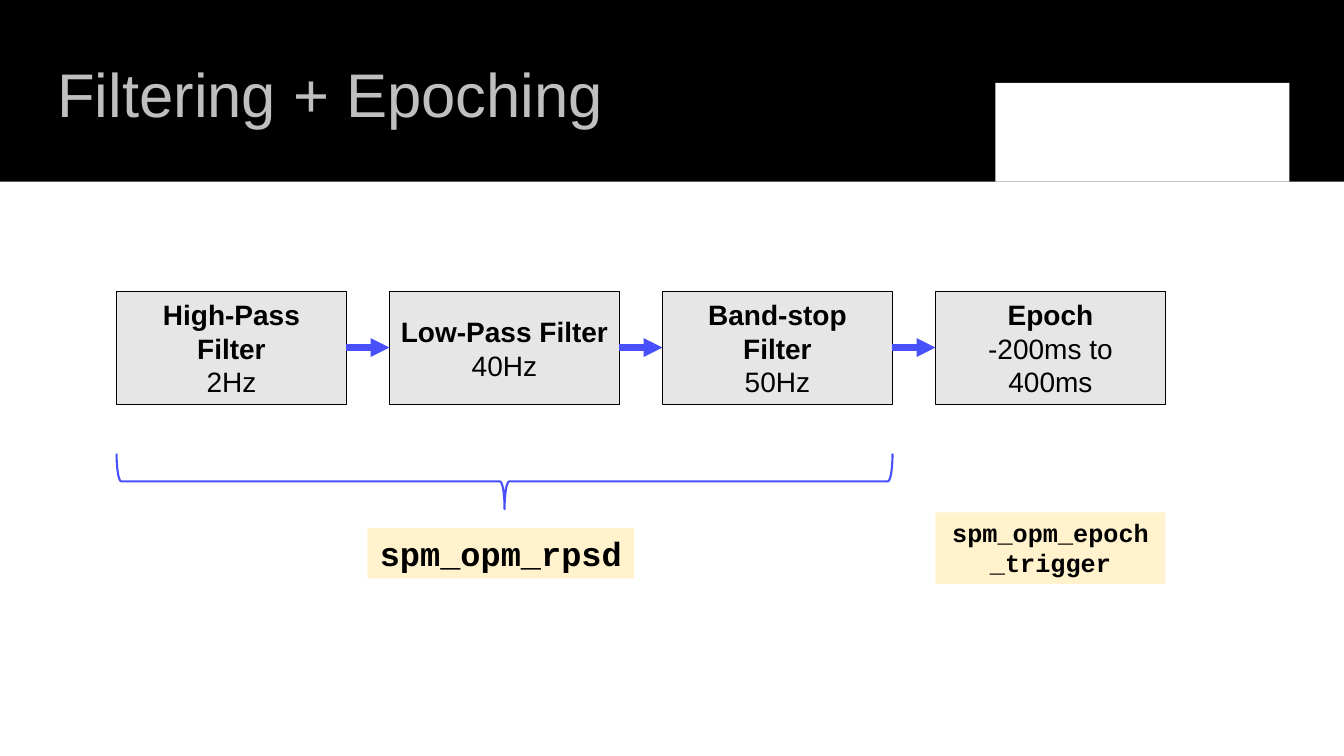
from dataclasses import dataclass

import lxml.etree
import pptx
import pptx.dml.color
import pptx.enum.dml
import pptx.enum.shapes
import pptx.enum.text
import pptx.oxml.ns
import pptx.util

SHAPE = pptx.enum.shapes.MSO_SHAPE
ANCHOR = pptx.enum.text.MSO_ANCHOR
ALIGN = pptx.enum.text.PP_ALIGN


@dataclass(frozen=True)
class Theme:
    black: str = "000000"
    white: str = "FFFFFF"
    title: str = "BFBFBF"
    step: str = "E7E6E6"
    code: str = "FFF2CC"
    accent: str = "4850FC"
    sans: str = "Arial"
    mono: str = "Courier New"
    title_size: int = 44
    step_size: int = 20
    border: float = 0.75
    brace: float = 1.5
    arrow: float = 4.5


@dataclass(frozen=True)
class Box:
    left: int
    top: int
    width: int
    height: int


@dataclass(frozen=True)
class Step:
    name: str
    setting: str


@dataclass(frozen=True)
class CodeLabel:
    text: str
    box: Box
    size: int


THEME = Theme()
PX = 9525
STEP_LEFT, STEP_TOP, STEP_WIDTH, STEP_HEIGHT, STEP_PITCH = 111, 278, 219, 107, 260
STEPS = [
    Step("High-Pass Filter", "2Hz"),
    Step("Low-Pass Filter", "40Hz"),
    Step("Band-stop Filter", "50Hz"),
    Step("Epoch", "-200ms to 400ms"),
]
FILTER_COUNT = 3
BRACE_TOP, BRACE_DEPTH = 432, 53
EPOCH_LEFT = STEP_LEFT + FILTER_COUNT * STEP_PITCH
CODE_LABELS = [
    CodeLabel("spm_opm_rpsd", Box(350, 503, 254, 48), 24),
    CodeLabel("spm_opm_epoch_trigger", Box(EPOCH_LEFT, 488, STEP_WIDTH, 68), 18),
]


def px(n: int) -> int:
    return pptx.util.Emu(n * PX)


def rgb(color: str) -> pptx.dml.color.RGBColor:
    return pptx.dml.color.RGBColor.from_string(color)


def add_run(p, text: str, font: str, size: int, color: str, bold: bool = False) -> None:
    r = p.add_run()
    r.text = text
    r.font.name = font
    r.font.size = pptx.util.Pt(size)
    r.font.bold = bold
    r.font.color.rgb = rgb(color)


def add_shape(s, kind, box: Box, fill: str = "", line: str = "", weight: float = 0):
    sp = s.shapes.add_shape(kind, px(box.left), px(box.top), px(box.width), px(box.height))
    sp.shadow.inherit = False
    if fill:
        sp.fill.solid()
        sp.fill.fore_color.rgb = rgb(fill)
    else:
        sp.fill.background()
    if line:
        sp.line.color.rgb = rgb(line)
        sp.line.width = pptx.util.Pt(weight)
    else:
        sp.line.fill.background()
    return sp


def add_title(s, text: str) -> None:
    sp = s.shapes.title
    sp.left, sp.top, sp.width, sp.height = px(45), px(23), px(1104), px(139)
    tf = sp.text_frame
    tf.auto_size = pptx.enum.text.MSO_AUTO_SIZE.NONE
    tf.vertical_anchor = ANCHOR.MIDDLE
    p = tf.paragraphs[0]
    p.alignment = ALIGN.LEFT
    p.line_spacing = 0.9
    add_run(p, text, THEME.sans, THEME.title_size, THEME.title)


def add_banner(s) -> None:
    banner = add_shape(s, SHAPE.RECTANGLE, Box(0, 0, 1280, 173), THEME.black)
    emblem = add_shape(s, SHAPE.RECTANGLE, Box(948, 79, 280, 94), THEME.white)
    for sp in (banner, emblem):
        s.shapes.title.element.addprevious(sp.element)


def add_step(s, step: Step, left: int) -> None:
    box = Box(left, STEP_TOP, STEP_WIDTH, STEP_HEIGHT)
    sp = add_shape(s, SHAPE.RECTANGLE, box, THEME.step, THEME.black, THEME.border)
    tf = sp.text_frame
    tf.word_wrap = True
    tf.vertical_anchor = ANCHOR.MIDDLE
    for p, text, bold in (
        (tf.paragraphs[0], step.name, True),
        (tf.add_paragraph(), step.setting, False),
    ):
        p.alignment = ALIGN.CENTER
        add_run(p, text, THEME.sans, THEME.step_size, THEME.black, bold)


def add_arrow(s, start: int, end: int, y: int) -> None:
    cx = s.shapes.add_connector(
        pptx.enum.shapes.MSO_CONNECTOR.STRAIGHT, px(start), px(y), px(end), px(y)
    )
    cx.line.color.rgb = rgb(THEME.accent)
    cx.line.width = pptx.util.Pt(THEME.arrow)
    qn = pptx.oxml.ns.qn
    lxml.etree.SubElement(cx.line.fill._xPr, qn("a:tailEnd"), type="triangle")
    lxml.etree.SubElement(cx.element.spPr, qn("a:effectLst"))


def add_brace(s, left: int, length: int) -> None:
    inset = (length - BRACE_DEPTH) // 2
    box = Box(left + inset, BRACE_TOP - inset, BRACE_DEPTH, length)
    sp = add_shape(s, SHAPE.RIGHT_BRACE, box, "", THEME.accent, THEME.brace)
    sp.rotation = 90


def add_code(s, label: CodeLabel) -> None:
    sp = add_shape(s, SHAPE.RECTANGLE, label.box, THEME.code)
    tf = sp.text_frame
    tf.word_wrap = True
    tf.vertical_anchor = ANCHOR.TOP
    p = tf.paragraphs[0]
    p.alignment = ALIGN.CENTER
    add_run(p, label.text, THEME.mono, label.size, THEME.black, True)


def main() -> None:
    prs = pptx.Presentation()
    prs.slide_width, prs.slide_height = px(1280), px(720)
    s = prs.slides.add_slide(prs.slide_layouts.get_by_name("Title Only"))
    add_title(s, "Filtering + Epoching")
    add_banner(s)
    for i, step in enumerate(STEPS):
        left = STEP_LEFT + i * STEP_PITCH
        add_step(s, step, left)
        if i:
            add_arrow(s, left - STEP_PITCH + STEP_WIDTH, left, STEP_TOP + STEP_HEIGHT // 2)
    add_brace(s, STEP_LEFT, (FILTER_COUNT - 1) * STEP_PITCH + STEP_WIDTH)
    for label in CODE_LABELS:
        add_code(s, label)
    prs.save("out.pptx")


if __name__ == "__main__":
    main()
